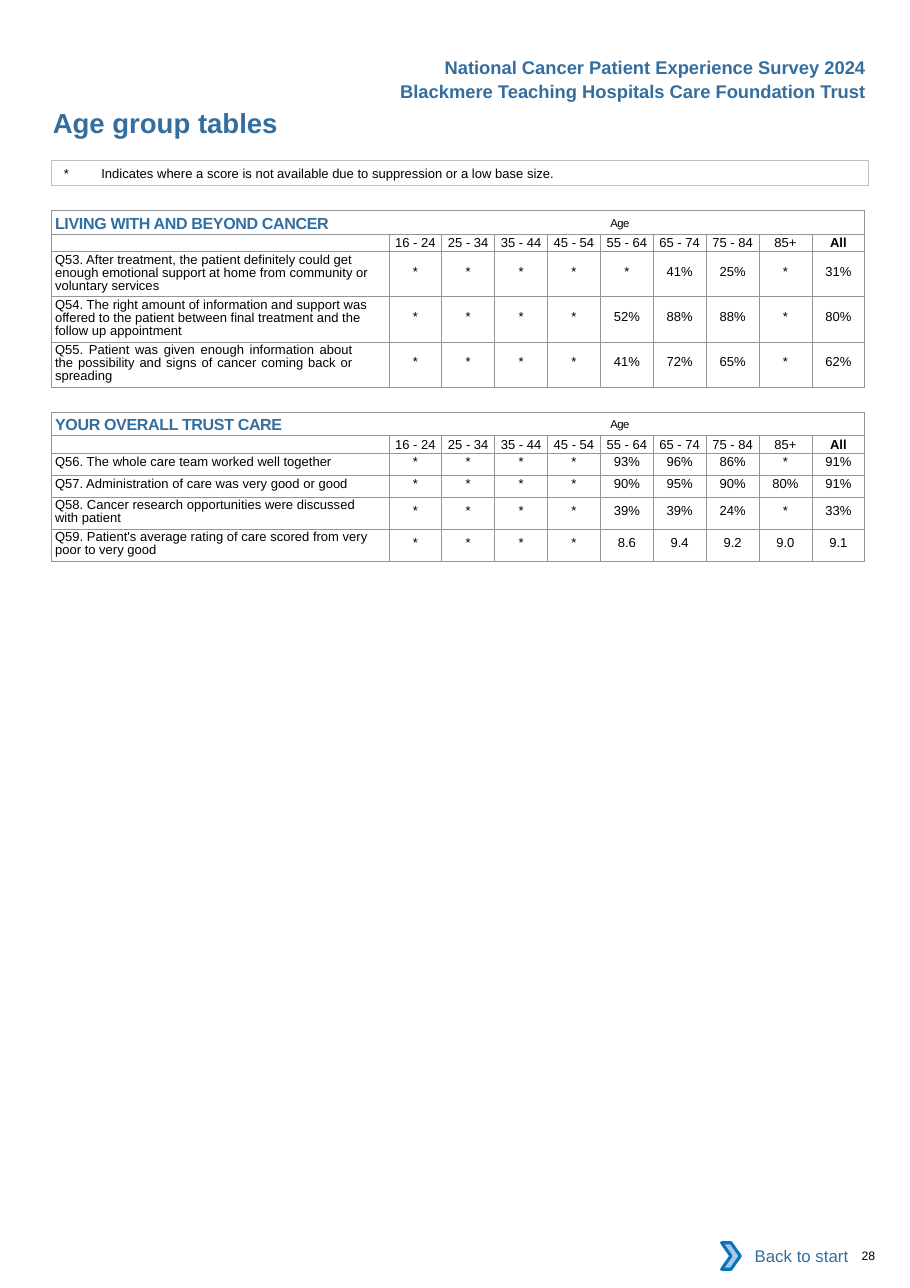
from lxml.etree import SubElement
from pptx import Presentation
from pptx.dml.color import RGBColor
from pptx.enum.shapes import MSO_SHAPE as Shape
from pptx.enum.text import MSO_ANCHOR as Anchor, PP_ALIGN as Align
from pptx.oxml.ns import qn
from pptx.util import Inches, Pt

BLUE = RGBColor(0x33, 0x6E, 0x9F)
BLACK = RGBColor(0, 0, 0)
WHITE = RGBColor(0xFF, 0xFF, 0xFF)
GRID_GREY = RGBColor(0x93, 0x95, 0x98)
NOTE_GREY = RGBColor(0xBF, 0xBF, 0xBF)
CHEVRON_FILL = RGBColor(0xA8, 0xC7, 0xE9)
CHEVRON_LINE = RGBColor(0x0A, 0x74, 0xBB)

LEFT, WIDTH = 0.47, 7.41
QUESTION_WIDTH, SCORE_WIDTH = 3.06, 0.48
AGES = ["16 - 24", "25 - 34", "35 - 44", "45 - 54", "55 - 64",
        "65 - 74", "75 - 84", "85+", "All"]
# Lines in a question: row height, top inset of its scores
ROW_FORMAT = {1: (0.2, 0.01), 2: (0.29, 0.06), 3: (0.41, 0.12)}

# Question, its lines, scores by age
LIVING = [
    ("Q53. After treatment, the patient definitely could get enough emotional "
     "support at home from community or voluntary services", 3,
     "* * * * * 41% 25% * 31%"),
    ("Q54. The right amount of information and support was offered to the "
     "patient between final treatment and the follow up appointment", 3,
     "* * * * 52% 88% 88% * 80%"),
    ("Q55. Patient was given enough information about the possibility and "
     "signs of cancer coming back or spreading", 3,
     "* * * * 41% 72% 65% * 62%"),
]
OVERALL = [
    ("Q56. The whole care team worked well together", 1,
     "* * * * 93% 96% 86% * 91%"),
    ("Q57. Administration of care was very good or good", 1,
     "* * * * 90% 95% 90% 80% 91%"),
    ("Q58. Cancer research opportunities were discussed with patient", 2,
     "* * * * 39% 39% 24% * 33%"),
    ("Q59. Patient's average rating of care scored from very poor to very good",
     2, "* * * * 8.6 9.4 9.2 9.0 9.1"),
]
JUSTIFIED = "Q55"


def write(paragraph, text, size=8.5, color=BLACK, bold=False, align=None,
          indent=0, right=0, leading=None, tab=None, tracking=0, baseline=0):
    """Add a run to the paragraph and format both."""
    if align is not None:
        paragraph.alignment = align
    if leading:
        paragraph.line_spacing = Pt(leading)
    properties = paragraph._p.get_or_add_pPr()
    if indent:
        properties.set("marL", str(Inches(indent)))
    if right:
        properties.set("marR", str(Inches(right)))
    if tab:
        stops = SubElement(properties, qn("a:tabLst"))
        SubElement(stops, qn("a:tab"), pos=str(Inches(tab)), algn="l")
    if not text:
        paragraph._p.get_or_add_endParaRPr().set("sz", str(int(size * 100)))
        return
    run = paragraph.add_run()
    run.text = text
    font = run.font
    font.name, font.size, font.bold = "Arial", Pt(size), bold
    font.color.rgb = color
    if tracking:
        font._element.set("spc", str(round(tracking * 100)))
    if baseline:
        font._element.set("baseline", str(baseline * 1000))


class Page:
    def __init__(self, width, height):
        self.deck = Presentation()
        self.deck.slide_width, self.deck.slide_height = Inches(width), Inches(height)
        self.slide = self.deck.slides.add_slide(self.deck.slide_layouts[6])

    def text(self, text, box, inset=0, wrap=True, **style):
        label = self.slide.shapes.add_textbox(*map(Inches, box))
        self.fill_frame(label.text_frame, text, (inset, inset / 2), wrap, **style)

    def shape(self, kind, box, fill=None, line=None, weight=0.5):
        shape = self.slide.shapes.add_shape(kind, *map(Inches, box))
        shape.shadow.inherit = False
        if fill is None:
            shape.fill.background()
        else:
            shape.fill.solid()
            shape.fill.fore_color.rgb = fill
        if line is None:
            shape.line.fill.background()
        else:
            shape.line.color.rgb = line
            shape.line.width = Pt(weight)
        return shape

    def fill_frame(self, frame, text, insets, wrap=True, anchor=Anchor.TOP, **style):
        frame.word_wrap = wrap
        frame.vertical_anchor = anchor
        frame.margin_left = frame.margin_right = Inches(insets[0])
        frame.margin_top = frame.margin_bottom = Inches(insets[1])
        write(frame.paragraphs[0], text, **style)

    def cell(self, cell, text, top=0, anchor=Anchor.MIDDLE, **style):
        cell.margin_left = cell.margin_right = cell.margin_bottom = 0
        cell.margin_top = Inches(top)
        cell.vertical_anchor = anchor
        properties = cell._tc.get_or_add_tcPr()
        for side in ("a:lnL", "a:lnR", "a:lnT", "a:lnB"):
            edge = SubElement(properties, qn(side), w=str(Pt(0.5)))
            paint = SubElement(edge, qn("a:solidFill"))
            SubElement(paint, qn("a:srgbClr"), val=str(GRID_GREY))
        cell.fill.background()
        write(cell.text_frame.paragraphs[0], text, **style)

    def score_table(self, heading, questions, top):
        heights = [0.21, 0.16] + [ROW_FORMAT[lines][0] for _, lines, _ in questions]
        table = self.slide.shapes.add_table(
            len(heights), len(AGES) + 1, Inches(LEFT), Inches(top),
            Inches(WIDTH), Inches(sum(heights))).table
        table.first_row = table.horz_banding = False
        for row, height in zip(table.rows, heights):
            row.height = Inches(height)
        for column, width in zip(table.columns,
                                 [QUESTION_WIDTH] + [SCORE_WIDTH] * len(AGES)):
            column.width = Inches(width)

        # Heading across all columns
        first = table.cell(0, 0)
        first.merge(table.cell(0, len(AGES)))
        for col in range(1, len(AGES) + 1):
            self.cell(table.cell(0, col), "")
        self.cell(first, heading + "\t", size=10.5, color=BLUE, bold=True,
                  indent=0.03, tab=5.04, tracking=-0.2)
        write(first.text_frame.paragraphs[0], "Age", size=12.8, tracking=-0.4,
              baseline=10)

        # Age groups
        self.cell(table.cell(1, 0), "")
        for col, age in enumerate(AGES, 1):
            self.cell(table.cell(1, col), age, align=Align.CENTER, leading=9.9,
                      bold=age == "All")

        # Questions and scores
        for row, (question, lines, scores) in enumerate(questions, 2):
            justified = question.startswith(JUSTIFIED)
            self.cell(table.cell(row, 0), question, top=0.02 if lines > 1 else 0.01,
                      anchor=Anchor.TOP, indent=0.03, right=0.33 if justified else 0.15,
                      leading=8.6 if lines > 1 else None,
                      align=Align.JUSTIFY if justified else Align.LEFT)
            for col, score in enumerate(scores.split(), 1):
                self.cell(table.cell(row, col), score, top=ROW_FORMAT[lines][1],
                          anchor=Anchor.TOP, align=Align.CENTER)


def main():
    page = Page(8.26, 11.69)

    # Header
    heading = dict(inset=0.1, wrap=False, size=12, color=BLUE, bold=True,
                   align=Align.RIGHT)
    page.text("National Cancer Patient Experience Survey 2024",
              (3.92, 0.46, 4.04, 0.3), **heading)
    page.text("Blackmere Teaching Hospitals Care Foundation Trust",
              (3.52, 0.68, 4.44, 0.3), **heading)
    page.text("Age group tables", (LEFT, 0.96, 4.13, 0.3), size=18, color=BLUE,
              bold=True, indent=0.01)

    # Suppression note
    note = page.shape(Shape.RECTANGLE, (LEFT, 1.46, WIDTH, 0.22), line=NOTE_GREY)
    page.fill_frame(note.text_frame, "*\tIndicates where a score is not available "
                    "due to suppression or a low base size.", (0, 0.04),
                    align=Align.LEFT, indent=0.11, tab=0.34)

    # Score tables
    page.score_table("LIVING WITH AND BEYOND CANCER", LIVING, 1.91)
    page.score_table("YOUR OVERALL TRUST CARE", OVERALL, 3.74)

    # Footer
    back = page.shape(Shape.RECTANGLE, (6.62, 11.19, 1.18, 0.42), fill=WHITE)
    page.fill_frame(back.text_frame, "Back to start", (0.1, 0.05),
                    anchor=Anchor.MIDDLE, size=11, color=BLUE, align=Align.RIGHT)
    page.shape(Shape.CHEVRON, (6.55, 11.28, 0.17, 0.24), fill=CHEVRON_FILL,
               line=CHEVRON_LINE, weight=2)
    page.text("28", (7.72, 11.33, 0.51, 0.13), size=8, indent=0.1)

    page.deck.save("out.pptx")


if __name__ == "__main__":
    main()
